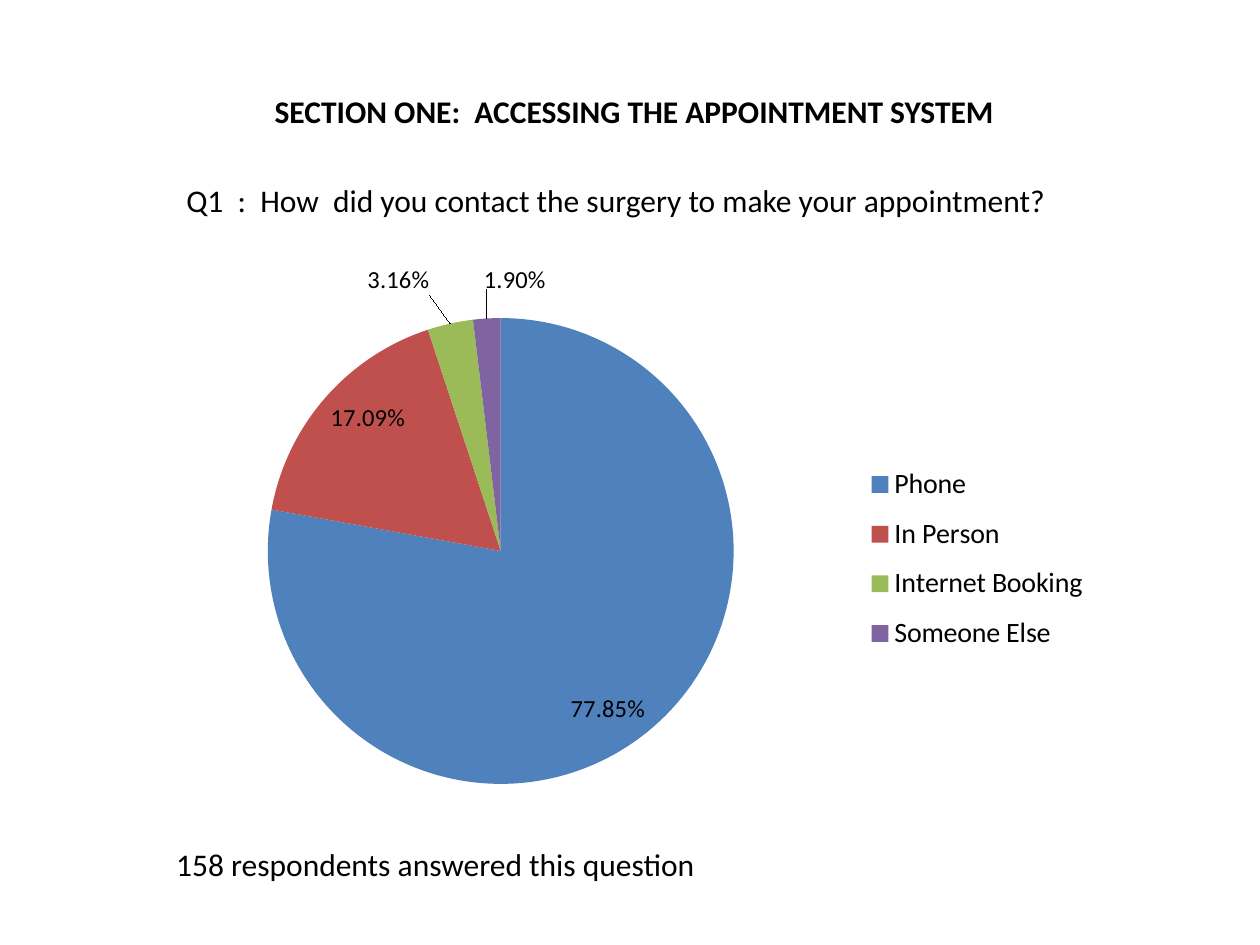
from dataclasses import dataclass
from typing import Any

from lxml.etree import SubElement
from pptx import Presentation
from pptx.chart.data import CategoryChartData
from pptx.dml.color import RGBColor
from pptx.enum.chart import XL_CHART_TYPE as ChartType
from pptx.enum.chart import XL_LABEL_POSITION as LabelPosition
from pptx.enum.chart import XL_LEGEND_POSITION as LegendPosition
from pptx.enum.text import PP_ALIGN as Align
from pptx.oxml.ns import qn
from pptx.util import Pt

FONT = "Calibri"
BLACK = "000000"


@dataclass
class Caption:
    text: str
    left: float
    top: float
    width: float
    bold: bool = False
    align: Any = Align.LEFT


@dataclass
class Slice:
    name: str
    share: float
    color: str
    label_shift: tuple[float, float] | None = None


CAPTIONS = [
    Caption("SECTION ONE:  ACCESSING THE APPOINTMENT SYSTEM",
            76.3, 49, 572.4, True, Align.CENTER),
    Caption("Q1  :  How  did you contact the surgery to make your appointment?",
            99.4, 100, 561.6),
    Caption("158 respondents answered this question", 93.6, 479.5, 504.7),
]
SLICES = [
    Slice("Phone", 0.7785, "4F81BD"),
    Slice("In Person", 0.1709, "C0504D"),
    Slice("Internet Booking", 0.0316, "9BBB59", (-0.02, -0.04)),
    Slice("Someone Else", 0.019, "8064A2", (0.03, -0.04)),
]


def rgb(color: str) -> RGBColor:
    return RGBColor.from_string(color)


def style_font(font: Any, size: float, bold: bool = False) -> None:
    font.name = FONT
    font.size = Pt(size)
    font.bold = bold
    font.color.rgb = rgb(BLACK)


def add_caption(slide: Any, caption: Caption) -> None:
    shape = slide.shapes.add_textbox(
        Pt(caption.left), Pt(caption.top), Pt(caption.width), Pt(29))
    text_frame = shape.text_frame
    text_frame.word_wrap = True
    text_frame.text = caption.text
    paragraph = text_frame.paragraphs[0]
    paragraph.alignment = caption.align
    style_font(paragraph.runs[0].font, 18, caption.bold)


def set_layout(parent: Any, index: int, **settings: Any) -> None:
    for existing in parent.findall(qn("c:layout")):
        parent.remove(existing)
    layout = SubElement(parent, qn("c:layout"))
    parent.insert(index, layout)
    manual = SubElement(layout, qn("c:manualLayout"))
    for name, value in settings.items():
        SubElement(manual, qn(f"c:{name}")).set("val", str(value))


def add_pie(slide: Any, slices: list[Slice]) -> None:
    data = CategoryChartData(number_format="0.00%")
    data.categories = [part.name for part in slices]
    data.add_series("Series 1", [part.share for part in slices])
    chart = slide.shapes.add_chart(
        ChartType.PIE, Pt(82.1), Pt(151.2), Pt(544.3), Pt(306), data).chart
    style_font(chart.font, 10)
    chart.has_title = False
    chart.has_legend = True
    legend = chart.legend
    legend.position = LegendPosition.RIGHT
    legend.include_in_layout = False
    style_font(legend.font, 16)
    set_layout(legend._element, 1, xMode="edge", yMode="edge",
               x=0.75, y=0.35, w=0.25, h=0.4)
    plot = chart.plots[0]
    plot.vary_by_categories = True
    set_layout(plot._element.getparent(), 0, layoutTarget="inner",
               xMode="edge", yMode="edge", x=0.13, y=0.1, w=0.49, h=0.87)

    series = plot.series[0]
    labels = series.data_labels
    labels.show_value = True
    labels.number_format = "0.00%"
    labels.number_format_is_linked = False
    labels.position = LabelPosition.INSIDE_END
    style_font(labels.font, 14)
    for index, part in enumerate(slices):
        point = series.points[index]
        point.format.fill.solid()
        point.format.fill.fore_color.rgb = rgb(part.color)
        if part.label_shift:
            label = point.data_label
            label.position = LabelPosition.OUTSIDE_END
            style_font(label.font, 14)
            shift_x, shift_y = part.label_shift
            element = labels._element.findall(qn("c:dLbl"))[-1]
            set_layout(element, 1, x=shift_x, y=shift_y)


def main() -> None:
    presentation = Presentation()
    presentation.slide_width = Pt(720)
    presentation.slide_height = Pt(540)
    slide = presentation.slides.add_slide(presentation.slide_layouts[6])
    for caption in CAPTIONS:
        add_caption(slide, caption)
    add_pie(slide, SLICES)
    presentation.save("out.pptx")


if __name__ == "__main__":
    main()
